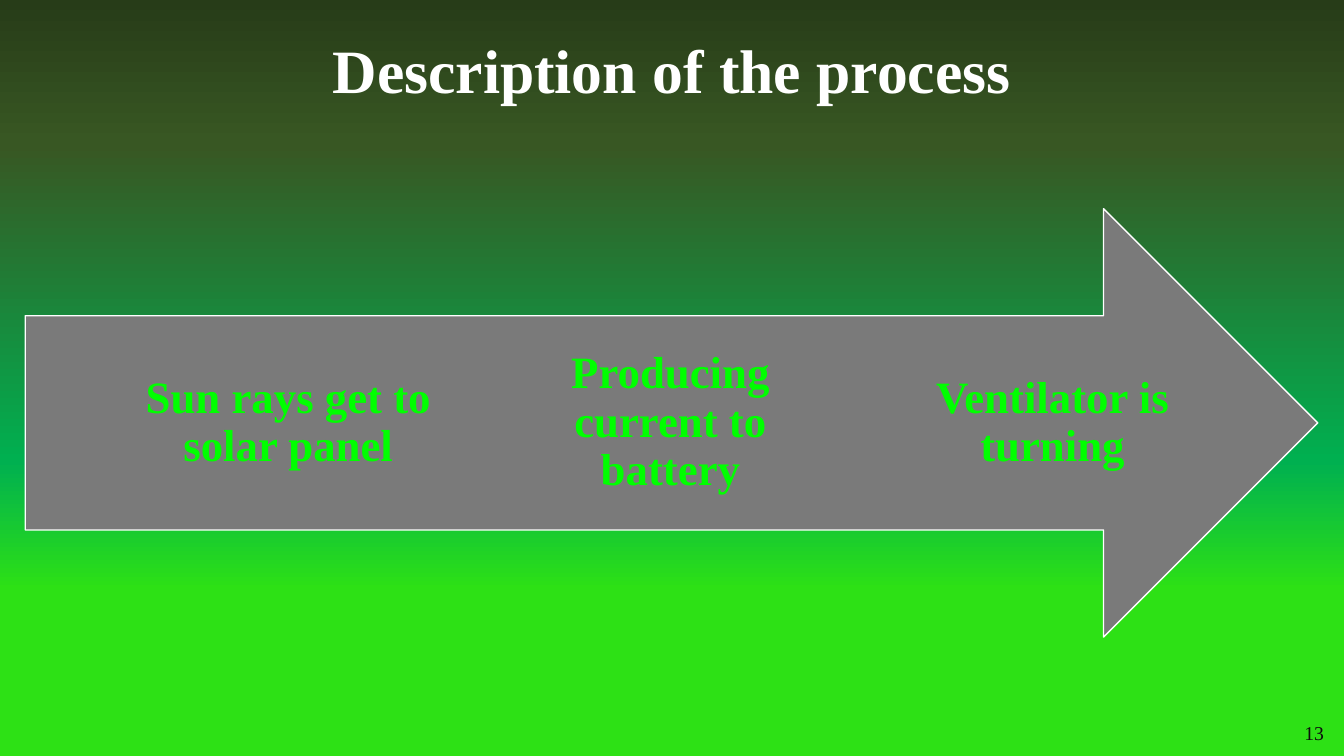
from lxml import etree
from pptx import Presentation
from pptx.dml.color import RGBColor
from pptx.enum import shapes, text
from pptx.oxml.ns import qn
from pptx.util import Inches, Pt

# Content
TITLE = "Description of the process"
STEPS = ["Sun rays get to solar panel", "Producing current to battery", "Ventilator is turning"]
PAGE_NUMBER = "13"

# Colours and text formats
WHITE = RGBColor(0xFF, 0xFF, 0xFF)
GREY = RGBColor(0x7A, 0x7A, 0x7A)
LIME = RGBColor(0x00, 0xFF, 0x00)
NEAR_BLACK = RGBColor(0x0D, 0x0D, 0x0D)
GRADIENT = [
    (0, RGBColor(0x27, 0x3C, 0x18)),
    (19, RGBColor(0x38, 0x57, 0x23)),
    (61, RGBColor(0x00, 0xB0, 0x50)),
    (78, RGBColor(0x2D, 0xE1, 0x15)),
]
FONT = "Times New Roman"
TITLE_FONT = {"name": FONT, "size": Pt(44), "bold": True}
STEP_FONT = {"name": FONT, "size": Pt(32), "bold": True}
NUMBER_FONT = {"name": FONT, "size": Pt(14), "bold": False}

# Layout in inches
SLIDE_WIDTH, SLIDE_HEIGHT = 13.33, 7.5
ARROW_LEFT, ARROW_TOP, ARROW_WIDTH, ARROW_HEIGHT = 0.25, 2.07, 12.82, 4.25
STEP_LEFT, STEP_WIDTH, STEP_PITCH = 1.28, 3.16, 3.79


def place(shape, left, top, width, height):
    shape.left, shape.top = Inches(left), Inches(top)
    shape.width, shape.height = Inches(width), Inches(height)


def write(shape, words, font, colour, alignment, line_spacing=1.0):
    frame = shape.text_frame
    frame.word_wrap = True
    frame.auto_size = text.MSO_AUTO_SIZE.NONE
    frame.vertical_anchor = text.MSO_ANCHOR.MIDDLE
    paragraph = frame.paragraphs[0]
    paragraph.alignment = alignment
    paragraph.line_spacing = line_spacing
    run = paragraph.add_run()
    run.text = words
    for name, value in font.items():
        setattr(run.font, name, value)
    run.font.color.rgb = colour


def paint_background(slide):
    fill = slide.background.fill
    fill.gradient()
    fill.gradient_angle = 270  # dark at the top
    stops = slide.element.find(".//" + qn("a:gsLst"))
    for stop in list(stops):
        stops.remove(stop)
    for percent, colour in GRADIENT:
        stop = etree.SubElement(stops, qn("a:gs"), pos=str(percent * 1000))
        etree.SubElement(stop, qn("a:srgbClr"), val=str(colour))


def main():
    presentation = Presentation()
    presentation.slide_width = Inches(SLIDE_WIDTH)
    presentation.slide_height = Inches(SLIDE_HEIGHT)
    slide = presentation.slides.add_slide(presentation.slide_layouts[5])
    paint_background(slide)

    # Title
    title = slide.shapes.title
    place(title, 0, 0, SLIDE_WIDTH, 1.45)
    write(title, TITLE, TITLE_FONT, WHITE, text.PP_ALIGN.CENTER, 0.9)

    # Page number
    number = slide.shapes.add_textbox(Inches(10.23), Inches(7.07), Inches(3), Inches(0.4))
    write(number, PAGE_NUMBER, NUMBER_FONT, NEAR_BLACK, text.PP_ALIGN.RIGHT)

    # Process arrow with its steps on the shaft, which is half as high
    process = slide.shapes.add_group_shape()
    arrow = process.shapes.add_shape(
        shapes.MSO_SHAPE.RIGHT_ARROW, Inches(ARROW_LEFT), Inches(ARROW_TOP),
        Inches(ARROW_WIDTH), Inches(ARROW_HEIGHT))
    arrow.shadow.inherit = False
    arrow.fill.solid()
    arrow.fill.fore_color.rgb = GREY
    arrow.line.color.rgb = WHITE
    arrow.line.width = Pt(1)

    for index, words in enumerate(STEPS):
        step = process.shapes.add_textbox(
            Inches(STEP_LEFT + index * STEP_PITCH), Inches(ARROW_TOP + ARROW_HEIGHT / 4),
            Inches(STEP_WIDTH), Inches(ARROW_HEIGHT / 2))
        frame = step.text_frame
        frame.margin_left = frame.margin_right = 0
        frame.margin_top = frame.margin_bottom = Inches(0.36)
        write(step, words, STEP_FONT, LIME, text.PP_ALIGN.CENTER, 0.9)

    presentation.save("out.pptx")


if __name__ == "__main__":
    main()
